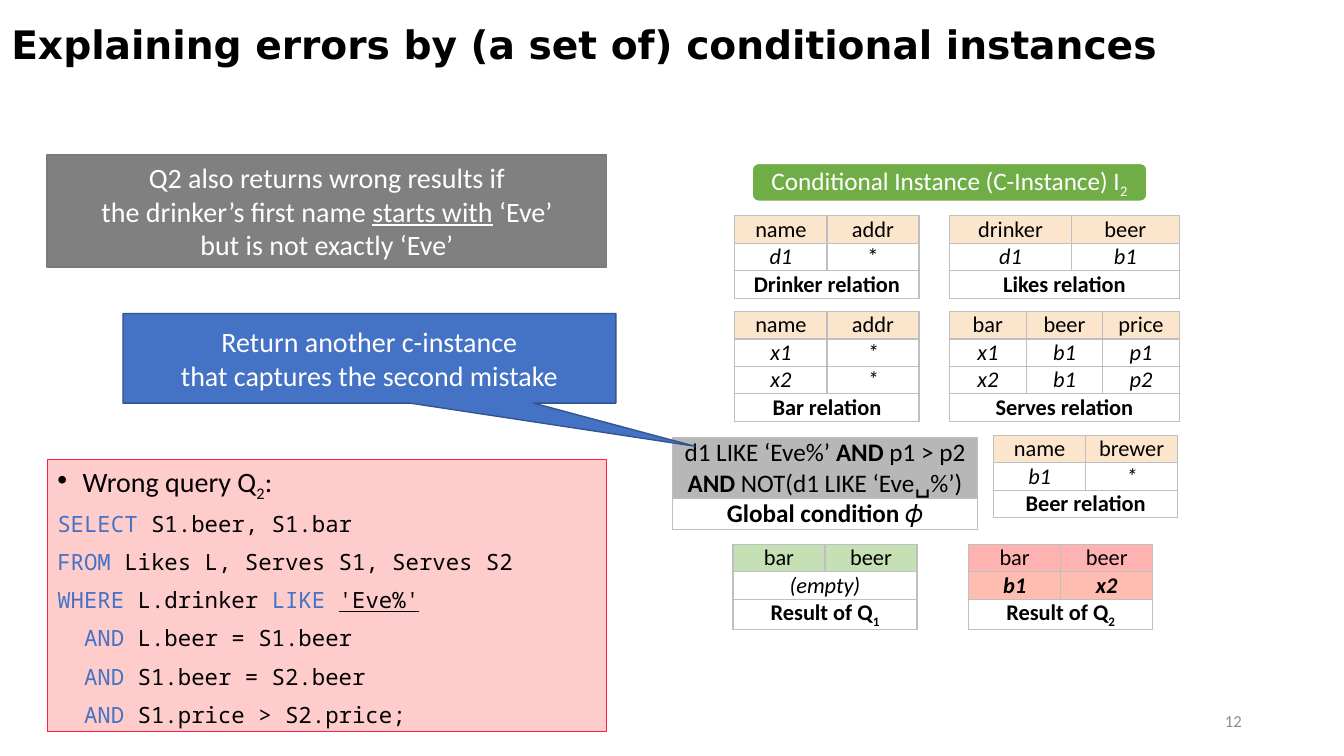
from lxml import etree
from pptx import Presentation
from pptx import util as u
from pptx.dml.color import RGBColor
from pptx.enum import shapes, text
from pptx.oxml.ns import qn

COLOURS = {
    "black": "000000", "white": "FFFFFF", "peach": "FCE5CD", "silver": "B7B7B7",
    "border": "BFBFBF", "green": "70AD47", "mint": "C5E0B4", "red": "FF0000",
    "scarlet": "FF2600", "crimson": "FF2143", "blue": "4472C4", "navy": "325491",
    "grey": "808080", "slate": "7A7A7A", "number": "8C8C8C",
}
BOLD, ITALIC, SUB = {"bold": True}, {"italic": True}, {"baseline": -25000}
KEYWORD = {"colour": "blue"}
BOX_TEXT = {"size": 20, "colour": "white"}


class SlideBuilder:
    base = {"name": "Calibri", "size": 16, "bold": False, "italic": False, "colour": "black"}
    centred = {"alignment": text.PP_ALIGN.CENTER}

    def __init__(self, slide):
        self.slide = slide

    def place(self, shape, box):
        for side, length in zip(("left", "top", "width", "height"), box):
            setattr(shape, side, u.Cm(length))

    def paint(self, fill, colour, element, alpha=100):
        fill.solid()
        fill.fore_color.rgb = RGBColor.from_string(COLOURS[colour])
        if alpha < 100:
            tint = element.find(qn("a:solidFill")).find(qn("a:srgbClr"))
            etree.SubElement(tint, qn("a:alpha"), val=str(alpha * 1000))

    def outline(self, shape, colour, width):
        shape.line.color.rgb = RGBColor.from_string(COLOURS[colour])
        shape.line.width = u.Pt(width)

    def fill_text(self, frame, lines, style, layout):
        frame.word_wrap = True
        for index, line in enumerate(lines):
            paragraph = frame.add_paragraph() if index else frame.paragraphs[0]
            for name, value in layout.items():
                setattr(paragraph, name, value)
            if not index:
                paragraph.space_before = u.Pt(0)
            for part in [line] if isinstance(line, str) else line:
                words, extra = (part, {}) if isinstance(part, str) else part
                look = {**self.base, **style, **extra}
                run = paragraph.add_run()
                run.text = words
                run.font.color.rgb = RGBColor.from_string(COLOURS[look.pop("colour")])
                look["size"] = u.Pt(look["size"])
                baseline = look.pop("baseline", None)
                for name, value in look.items():
                    setattr(run.font, name, value)
                if baseline:
                    run._r.get_or_add_rPr().set("baseline", str(baseline))

    def title(self, box, words):
        heading = self.slide.shapes.title
        self.place(heading, box)
        heading.text_frame.auto_size = text.MSO_AUTO_SIZE.NONE
        heading.text_frame.vertical_anchor = text.MSO_ANCHOR.MIDDLE
        self.fill_text(heading.text_frame, [words],
                       {"name": "DejaVu Sans", "size": 28, "bold": True},
                       {"alignment": text.PP_ALIGN.LEFT, "line_spacing": 0.9})

    def query(self, box, lines):
        body = self.slide.placeholders[1]
        self.place(body, box)
        self.paint(body.fill, "red", body._element.spPr, 20)
        self.outline(body, "crimson", 0.75)
        frame = body.text_frame
        frame.auto_size = text.MSO_AUTO_SIZE.NONE
        frame.vertical_anchor = text.MSO_ANCHOR.TOP
        self.fill_text(frame, lines, {"name": "Noto Sans Mono"},
                       {"line_spacing": 0.9, "space_before": u.Pt(10)})
        for index, paragraph in enumerate(frame.paragraphs):
            properties = paragraph._p.get_or_add_pPr()
            indent = 0 if index else u.Cm(0.64)
            properties.set("marL", str(indent))
            properties.set("indent", str(-indent))
            if index:
                etree.SubElement(properties, qn("a:buNone"))
            else:
                etree.SubElement(properties, qn("a:buFont"), typeface="Arial")
                etree.SubElement(properties, qn("a:buChar"), char="•")

    def box(self, kind, box, fill, line, width, lines, style, adjust=()):
        shape = self.slide.shapes.add_shape(kind, *map(u.Cm, box))
        shape.shadow.inherit = False
        self.paint(shape.fill, fill, shape._element.spPr)
        self.outline(shape, line, width)
        for index, value in enumerate(adjust):
            shape.adjustments[index] = value
        shape.text_frame.vertical_anchor = text.MSO_ANCHOR.MIDDLE
        self.fill_text(shape.text_frame, lines, style, self.centred)

    def label(self, box, words, style):
        area = self.slide.shapes.add_textbox(*map(u.Cm, box))
        area.text_frame.vertical_anchor = text.MSO_ANCHOR.MIDDLE
        self.fill_text(area.text_frame, [words], style, {"alignment": text.PP_ALIGN.RIGHT})

    def border(self, cell):
        properties = cell._tc.get_or_add_tcPr()
        for side in ("lnL", "lnR", "lnT", "lnB"):
            line = etree.SubElement(properties, qn(f"a:{side}"), w=str(u.Pt(1)))
            solid = etree.SubElement(line, qn("a:solidFill"))
            etree.SubElement(solid, qn("a:srgbClr"), val=COLOURS["border"])

    def table(self, left, top, widths, rows, size=16, height=0.68):
        frame = self.slide.shapes.add_table(
            len(rows), len(widths), u.Cm(left), u.Cm(top), u.Cm(sum(widths)), u.Cm(height * len(rows)))
        grid = frame.table
        grid.first_row = grid.horz_banding = False
        for column, width in zip(grid.columns, widths):
            column.width = u.Cm(width)
        for r, (fill, alpha, style, entries) in enumerate(rows):
            grid.rows[r].height = u.Cm(height)
            for cell in grid.rows[r].cells:
                cell.margin_top = cell.margin_bottom = 0
                self.border(cell)
                if fill:
                    self.paint(cell.fill, fill, cell._tc.tcPr, alpha)
                else:
                    cell.fill.background()
            if len(entries) < len(widths):
                grid.cell(r, 0).merge(grid.cell(r, len(widths) - 1))
            for c, entry in enumerate(entries):
                lines = entry if isinstance(entry, list) else [entry]
                self.fill_text(grid.cell(r, c).text_frame, lines,
                               {"size": size, **style}, self.centred)

    def relation(self, left, top, widths, header, data, caption):
        rows = [("peach", 100, {}, header)]
        rows += [(None, 100, ITALIC, entries) for entries in data]
        self.table(left, top, widths, rows + [(None, 100, BOLD, [caption + " relation"])])

    def result(self, left, number, header_fill, alpha, answer):
        caption = [["Result of Q", (number, SUB)]]
        self.table(left, 13.72, PAIR, [
            (header_fill, alpha, {}, ["bar", "beer"]), answer, (None, 100, BOLD, [caption])])


PAIR = [2.32] * 2
LEFT, RIGHT = 18.52, 23.93


def main():
    deck = Presentation()
    deck.slide_width, deck.slide_height = u.Cm(33.87), u.Cm(19.05)
    page = SlideBuilder(deck.slides.add_slide(deck.slide_layouts[1]))

    page.title((0.03, 0.03, 30.86, 2.29), "Explaining errors by (a set of) conditional instances")
    calibri = {"name": "Calibri", "size": 20}
    page.query((1.19, 11.58, 14.1, 6.86), [
        [("Wrong query Q", calibri), ("2", {**calibri, **SUB}), (":", calibri)],
        [("SELECT", KEYWORD), " S1.beer, S1.bar"],
        [("FROM", KEYWORD), " Likes L, Serves S1, Serves S2"],
        [("WHERE ", KEYWORD), "L.drinker ", ("LIKE ", KEYWORD), ("'Eve%'", {"underline": True})],
        *[["  ", ("AND ", KEYWORD), condition] for condition in (
            "L.beer = S1.beer", "S1.beer = S2.beer", "S1.price > S2.price;")],
    ])

    page.table(16.94, 11.02, [7.7], [
        ("silver", 100, {}, [[
            ["d1 LIKE ‘Eve%’ ", ("AND", BOLD), " p1 > p2"],
            [("AND", BOLD), " NOT(d1 LIKE ‘Eve␣%’)"]]]),
        (None, 100, {}, [[[("Global condition ", BOLD), "𝜙"]]]),
    ], size=18)
    page.relation(LEFT, 5.44, PAIR, ["name", "addr"],
                  [["d1", [[("*", {"italic": False})]]]], "Drinker")
    page.relation(RIGHT, 5.44, [3.07, 2.72], ["drinker", "beer"], [["d1", "b1"]], "Likes")
    page.relation(LEFT, 7.85, PAIR, ["name", "addr"], [["x1", "*"], ["x2", "*"]], "Bar")
    page.relation(RIGHT, 7.85, [1.93] * 3, ["bar", "beer", "price"],
                  [["x1", "b1", "p1"], ["x2", "b1", "p2"]], "Serves")
    page.relation(25.04, 10.97, PAIR, ["name", "brewer"], [["b1", "*"]], "Beer")
    page.result(18.47, "1", "mint", 100, (None, 100, ITALIC, ["(empty)"]))
    page.result(24.41, "2", "red", 30, ("scarlet", 30, {**BOLD, **ITALIC}, ["b1", "x2"]))

    preset = shapes.MSO_SHAPE
    page.box(preset.RECTANGLE, (1.19, 3.91, 14.1, 2.82), "grey", "slate", 1, [
        "Q2 also returns wrong results if",
        ["the drinker’s first name ", ("starts with", {"underline": True}), " ‘Eve’"],
        "but is not exactly ‘Eve’"], BOX_TEXT)
    page.box(preset.RECTANGULAR_CALLOUT, (3.1, 7.9, 12.42, 2.26), "blue", "navy", 1, [
        "Return another c-instance", "that captures the second mistake"], BOX_TEXT, (0.66, 0.98))
    page.box(preset.ROUNDED_RECTANGLE, (18.95, 4.11, 9.96, 0.97), "green", "white", 1.5, [
        ["Conditional Instance (C-Instance) I", ("2", SUB)]], {**BOX_TEXT, "size": 18})
    page.label((23.93, 17.65, 7.62, 1.02), "12", {"size": 12, "colour": "number"})
    deck.save("out.pptx")


if __name__ == "__main__":
    main()
